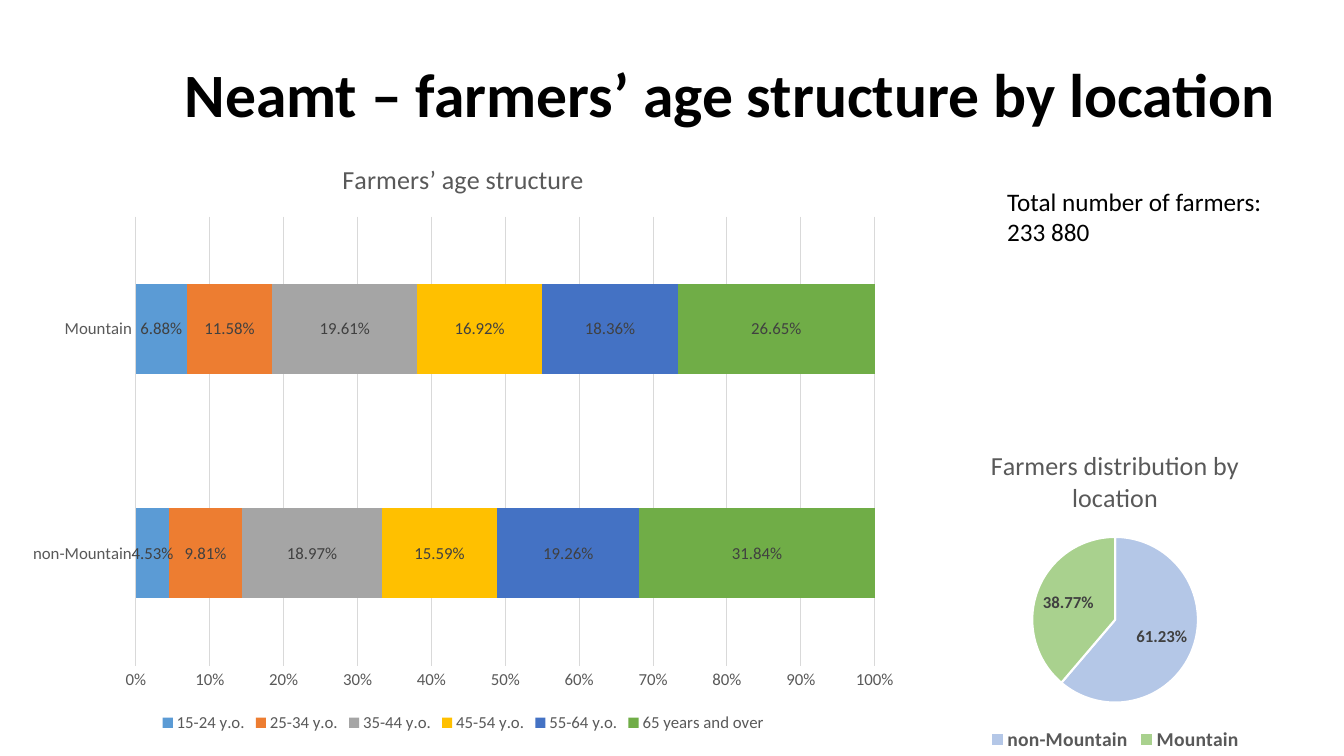
from pptx import Presentation
from pptx import util as u
from pptx.chart.data import CategoryChartData
from pptx.dml.color import RGBColor
from pptx.enum import chart as ch, text

PX = 9144
COLORS = {
    "black": "000000", "white": "FFFFFF", "muted": "595959",
    "label": "404040", "grid": "D9D9D9",
    "plain": "B4C7E7", "mountain": "A9D18E",
}
LOCATIONS = ["non-Mountain", "Mountain"]
AGE_GROUPS = [
    ("15-24 y.o.", "5B9BD5", (0.0453, 0.0688)),
    ("25-34 y.o.", "ED7D31", (0.0981, 0.1158)),
    ("35-44 y.o.", "A5A5A5", (0.1897, 0.1961)),
    ("45-54 y.o.", "FFC000", (0.1559, 0.1692)),
    ("55-64 y.o.", "4472C4", (0.1926, 0.1836)),
    ("65 years and over", "70AD47", (0.3184, 0.2665)),
]


class SlideBuilder:
    font_name = "Calibri"

    def __init__(self, slide):
        self.slide = slide

    def box(self, *lengths):
        return [u.Emu(length * PX) for length in lengths]

    def color(self, name):
        return RGBColor.from_string(COLORS.get(name, name))

    def style(self, font, size, color, bold=False):
        font.name = self.font_name
        font.size = u.Pt(size)
        font.bold = bold
        font.color.rgb = self.color(color)

    def fill(self, target, color):
        target.format.fill.solid()
        target.format.fill.fore_color.rgb = self.color(color)

    def rule(self, line, color, width=0.75):
        line.color.rgb = self.color(color)
        line.width = u.Pt(width)

    def add_words(self, paragraph, words, size, color, bold=False):
        run = paragraph.add_run()
        run.text = words
        self.style(run.font, size, color, bold)

    def title(self, words, *place):
        heading = self.slide.shapes.title
        heading.left, heading.top, heading.width, heading.height = self.box(*place)
        frame = heading.text_frame
        frame.vertical_anchor = text.MSO_ANCHOR.MIDDLE
        paragraph = frame.paragraphs[0]
        paragraph.alignment = text.PP_ALIGN.LEFT
        paragraph.line_spacing = 0.9
        self.add_words(paragraph, words, 44, "black", True)

    def note(self, lines, *place):
        frame = self.slide.shapes.add_textbox(*self.box(*place)).text_frame
        frame.word_wrap = True
        frame.auto_size = text.MSO_AUTO_SIZE.SHAPE_TO_FIT_TEXT
        for index, words in enumerate(lines):
            paragraph = frame.add_paragraph() if index else frame.paragraphs[0]
            self.add_words(paragraph, words, 18, "black")

    def chart(self, kind, heading, data, place, legend_size, bold=False):
        chart = self.slide.shapes.add_chart(kind, *self.box(*place), data).chart
        self.style(chart.font, 10, "black")
        chart.has_title = True
        paragraph = chart.chart_title.text_frame.paragraphs[0]
        self.add_words(paragraph, heading, 18.6, "muted")
        chart.chart_title.include_in_layout = False
        chart.has_legend = True
        chart.legend.position = ch.XL_LEGEND_POSITION.BOTTOM
        chart.legend.include_in_layout = False
        self.style(chart.legend.font, legend_size, "muted", bold)
        return chart

    def labels(self, labels, bold=False):
        labels.number_format = "0.00%"
        labels.number_format_is_linked = False
        self.style(labels.font, 12, "label", bold)

    def age_chart(self, heading, *place):
        data = CategoryChartData(number_format="0.00%")
        data.categories = LOCATIONS
        for name, _, shares in AGE_GROUPS:
            data.add_series(name, shares)
        chart = self.chart(ch.XL_CHART_TYPE.BAR_STACKED_100, heading, data, place, 12)
        plot = chart.plots[0]
        plot.gap_width = 150
        plot.overlap = 100
        for ages, (_, color, _) in zip(plot.series, AGE_GROUPS):
            self.fill(ages, color)
            ages.data_labels.show_value = True
            self.labels(ages.data_labels)
        for axis in (chart.category_axis, chart.value_axis):
            axis.major_tick_mark = axis.minor_tick_mark = ch.XL_TICK_MARK.NONE
            self.style(axis.tick_labels.font, 12, "muted")
        self.rule(chart.category_axis.format.line, "grid")
        shares_axis = chart.value_axis
        shares_axis.format.line.fill.background()
        shares_axis.has_major_gridlines = True
        self.rule(shares_axis.major_gridlines.format.line, "grid")
        shares_axis.maximum_scale = 1
        shares_axis.major_unit = 0.1
        shares_axis.tick_labels.number_format = "0%"
        shares_axis.tick_labels.number_format_is_linked = False

    def location_chart(self, heading, *place):
        data = CategoryChartData()
        data.categories = LOCATIONS
        data.add_series("Series 1", (61.23, 38.77))
        chart = self.chart(ch.XL_CHART_TYPE.PIE, heading, data, place, 14, True)
        plot = chart.plots[0]
        plot.vary_by_categories = True
        farmers = plot.series[0]
        for index, color in enumerate(("plain", "mountain")):
            slice_ = farmers.points[index]
            self.fill(slice_, color)
            self.rule(slice_.format.line, "white", 1.5)
        labels = farmers.data_labels
        labels.show_value = False
        labels.show_percentage = True
        labels.position = ch.XL_LABEL_POSITION.INSIDE_END
        self.labels(labels, True)


def main():
    deck = Presentation()
    deck.slide_width, deck.slide_height = u.Emu(1333 * PX), u.Emu(750 * PX)
    builder = SlideBuilder(deck.slides.add_slide(deck.slide_layouts[5]))
    builder.title("Neamt – farmers’ age structure by location", 173, 27, 1136, 140)
    builder.location_chart("Farmers distribution by location", 903, 427, 406, 323)
    builder.age_chart("Farmers’ age structure", 15, 138, 889, 593)
    builder.note(["Total number of farmers:", "233 880"], 989, 180, 292, 71)
    deck.save("out.pptx")


if __name__ == "__main__":
    main()
